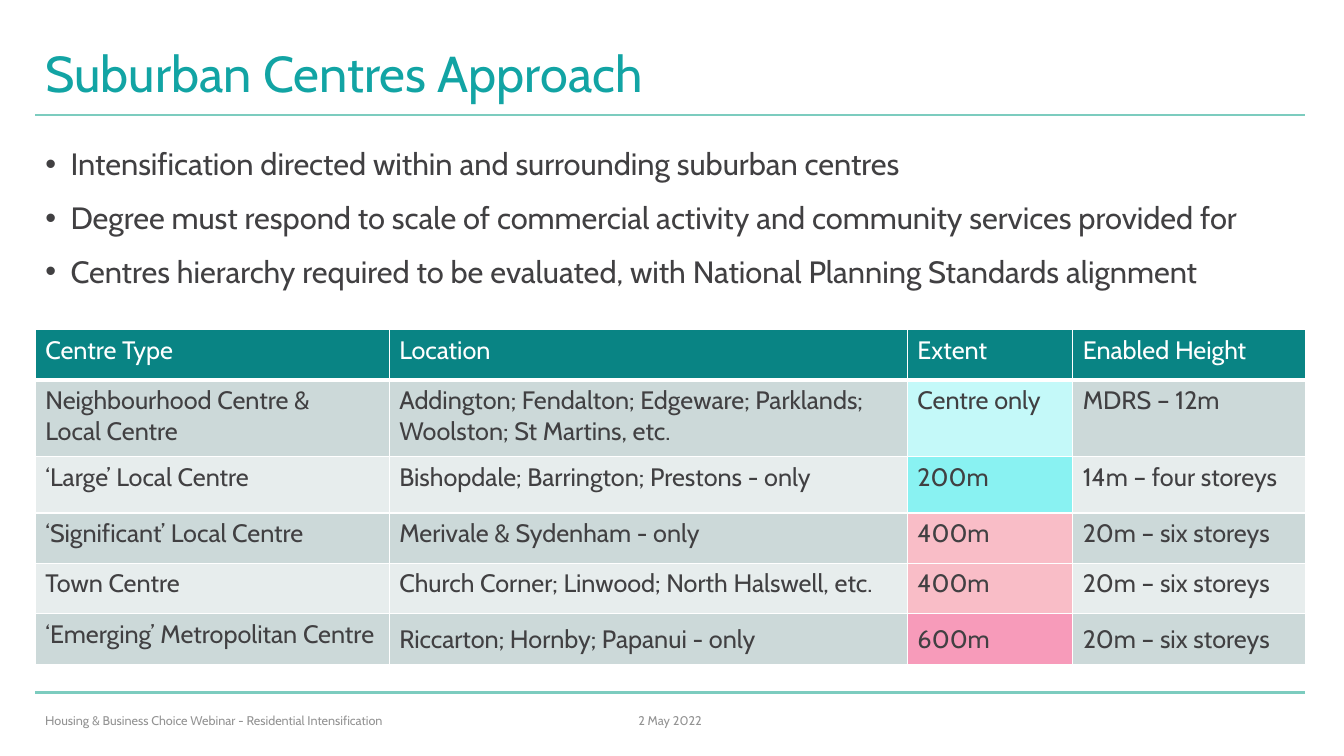
from dataclasses import dataclass
from typing import Any

from lxml import etree
from pptx import Presentation
from pptx.dml.color import RGBColor
from pptx.enum.shapes import MSO_CONNECTOR
from pptx.enum.text import MSO_ANCHOR, MSO_AUTO_SIZE, PP_ALIGN
from pptx.oxml.ns import qn
from pptx.util import Emu, Pt

STRAIGHT = MSO_CONNECTOR.STRAIGHT
TOP, MIDDLE = MSO_ANCHOR.TOP, MSO_ANCHOR.MIDDLE
LEFT, CENTER = PP_ALIGN.LEFT, PP_ALIGN.CENTER
NO_AUTOFIT = MSO_AUTO_SIZE.NONE
EMU_PER_PX = 9144  # 100 px to the inch


def px(length: int) -> Emu:
    return Emu(length * EMU_PER_PX)


@dataclass(frozen=True)
class Theme:
    font: str = "Cabin"
    title: str = "12A4A4"
    text: str = "414042"
    muted: str = "939393"
    white: str = "FFFFFF"
    rule: str = "7CCCBF"
    header: str = "098484"
    bands: tuple[str, str] = ("CCD9D9", "E7EDED")
    title_size: int = 36
    body_size: int = 22
    table_size: int = 18
    footer_size: int = 9


@dataclass(frozen=True)
class Box:
    left: int
    top: int
    width: int
    height: int


@dataclass(frozen=True)
class Footer:
    text: str
    box: Box
    alignment: Any


@dataclass(frozen=True)
class Centre:
    kind: str
    location: str
    extent: str
    enabled_height: str
    extent_fill: str
    row_height: int
    detail_anchor: Any = TOP


THEME = Theme()
TITLE_BOX = Box(35, 40, 1260, 72)
BODY_BOX = Box(35, 139, 1260, 161)
TABLE_BOX = Box(35, 327, 1260, 332)
RULE_LEFT, RULE_RIGHT = 35, 1294
RULE_TOPS = (114, 687)
BULLET_INDENT = 25
COLUMN_WIDTHS = (351, 514, 164, 231)
HEADER_HEIGHT = 50
EXTENT_COLUMN = 2

BULLETS = (
    "Intensification directed within and surrounding suburban centres",
    "Degree must respond to scale of commercial activity and community services provided for",
    "Centres hierarchy required to be evaluated, with National Planning Standards alignment",
)
HEADINGS = ("Centre Type", "Location", "Extent", "Enabled Height")
CENTRES = (
    Centre("Neighbourhood Centre &\nLocal Centre",
           "Addington; Fendalton; Edgeware; Parklands; Woolston; St Martins, etc.",
           "Centre only", "MDRS – 12m", "C4F9F9", 76),
    Centre("‘Large’ Local Centre", "Bishopdale; Barrington; Prestons - only",
           "200m", "14m – four storeys", "89F2F2", 56),
    Centre("‘Significant’ Local Centre", "Merivale & Sydenham - only",
           "400m", "20m – six storeys", "F9BDC7", 50),
    Centre("Town Centre", "Church Corner; Linwood; North Halswell, etc.",
           "400m", "20m – six storeys", "F9BDC7", 50),
    Centre("‘Emerging’ Metropolitan Centre", "Riccarton; Hornby; Papanui - only",
           "600m", "20m – six storeys", "F79BBA", 50, MIDDLE),
)
FOOTERS = (
    Footer("2 May 2022", Box(607, 695, 115, 40), CENTER),
    Footer("Housing & Business Choice Webinar - Residential Intensification",
           Box(35, 695, 503, 40), LEFT),
)


def apply_format(target: Any, values: dict[str, Any]) -> None:
    for name, value in values.items():
        setattr(target, name, value)


def place(shape: Any, box: Box) -> None:
    apply_format(shape, {"left": px(box.left), "top": px(box.top),
                         "width": px(box.width), "height": px(box.height)})


def style_runs(paragraph: Any, size: int, color: str) -> None:
    for run in paragraph.runs:
        apply_format(run.font, {"name": THEME.font, "size": Pt(size), "bold": False})
        run.font.color.rgb = RGBColor.from_string(color)


def write(frame: Any, text: str, size: int, color: str, layout: dict[str, Any]) -> None:
    frame.text = text
    for paragraph in frame.paragraphs:
        apply_format(paragraph, layout)
        style_runs(paragraph, size, color)


def add_bullet(paragraph: Any) -> None:
    properties = paragraph._p.get_or_add_pPr()
    properties.set("marL", str(px(BULLET_INDENT)))
    properties.set("indent", str(px(-BULLET_INDENT)))
    etree.SubElement(properties, qn("a:buFont")).set("typeface", "Arial")
    etree.SubElement(properties, qn("a:buChar")).set("char", "•")


def add_rule(slide: Any, top: int) -> None:
    rule = slide.shapes.add_connector(STRAIGHT, px(RULE_LEFT), px(top), px(RULE_RIGHT), px(top))
    rule.line.color.rgb = RGBColor.from_string(THEME.rule)
    rule.line.width = Pt(1.5)
    etree.SubElement(rule._element.spPr, qn("a:effectLst"))


def add_borders(cell: Any, bottom_width: int) -> None:
    properties = cell._tc.get_or_add_tcPr()
    for side, width in (("L", 1), ("R", 1), ("T", 1), ("B", bottom_width)):
        line = etree.SubElement(properties, qn(f"a:ln{side}"))
        line.set("w", str(Pt(width)))
        fill = etree.SubElement(line, qn("a:solidFill"))
        etree.SubElement(fill, qn("a:srgbClr")).set("val", THEME.white)


def fill_cell(cell: Any, text: str, fill: str, color: str,
              anchor: Any = TOP, bottom_width: int = 1) -> None:
    add_borders(cell, bottom_width)
    cell.fill.solid()
    cell.fill.fore_color.rgb = RGBColor.from_string(fill)
    cell.vertical_anchor = anchor
    write(cell.text_frame, text, THEME.table_size, color, {"alignment": LEFT})


def add_centres_table(slide: Any) -> None:
    box = TABLE_BOX
    table = slide.shapes.add_table(len(CENTRES) + 1, len(HEADINGS), px(box.left), px(box.top),
                                   px(box.width), px(box.height)).table
    for column, width in zip(table.columns, COLUMN_WIDTHS):
        column.width = px(width)
    table.rows[0].height = px(HEADER_HEIGHT)
    for index, heading in enumerate(HEADINGS):
        fill_cell(table.cell(0, index), heading, THEME.header, THEME.white, bottom_width=3)
    for row, centre in enumerate(CENTRES, start=1):
        table.rows[row].height = px(centre.row_height)
        band = THEME.bands[(row - 1) % 2]
        texts = (centre.kind, centre.location, centre.extent, centre.enabled_height)
        for column, text in enumerate(texts):
            fill = centre.extent_fill if column == EXTENT_COLUMN else band
            anchor = centre.detail_anchor if column else TOP
            fill_cell(table.cell(row, column), text, fill, THEME.text, anchor)


def add_footer(slide: Any, footer: Footer) -> None:
    shape = slide.shapes.add_textbox(0, 0, 0, 0)
    place(shape, footer.box)
    apply_format(shape.text_frame, {"word_wrap": True, "vertical_anchor": MIDDLE})
    write(shape.text_frame, footer.text, THEME.footer_size, THEME.muted,
          {"alignment": footer.alignment})


def main() -> None:
    presentation = Presentation()
    apply_format(presentation, {"slide_width": px(1333), "slide_height": px(750)})
    slide = presentation.slides.add_slide(presentation.slide_layouts[1])

    # Rules under the title and above the footer
    for top in RULE_TOPS:
        add_rule(slide, top)

    # Title
    title = slide.shapes.title
    place(title, TITLE_BOX)
    apply_format(title.text_frame, {"auto_size": NO_AUTOFIT, "vertical_anchor": MIDDLE})
    write(title.text_frame, "Suburban Centres Approach", THEME.title_size, THEME.title,
          {"alignment": LEFT, "line_spacing": 0.9})

    # Bullet list
    body = slide.placeholders[1]
    place(body, BODY_BOX)
    apply_format(body.text_frame, {"auto_size": NO_AUTOFIT, "vertical_anchor": TOP})
    body.text_frame.text = "\n".join(BULLETS)
    for index, paragraph in enumerate(body.text_frame.paragraphs):
        add_bullet(paragraph)
        apply_format(paragraph, {"space_before": Pt(6 if index else 0), "space_after": Pt(6)})
        style_runs(paragraph, THEME.body_size, THEME.text)

    # Table and footer
    add_centres_table(slide)
    for footer in FOOTERS:
        add_footer(slide, footer)

    presentation.save("out.pptx")


if __name__ == "__main__":
    main()
